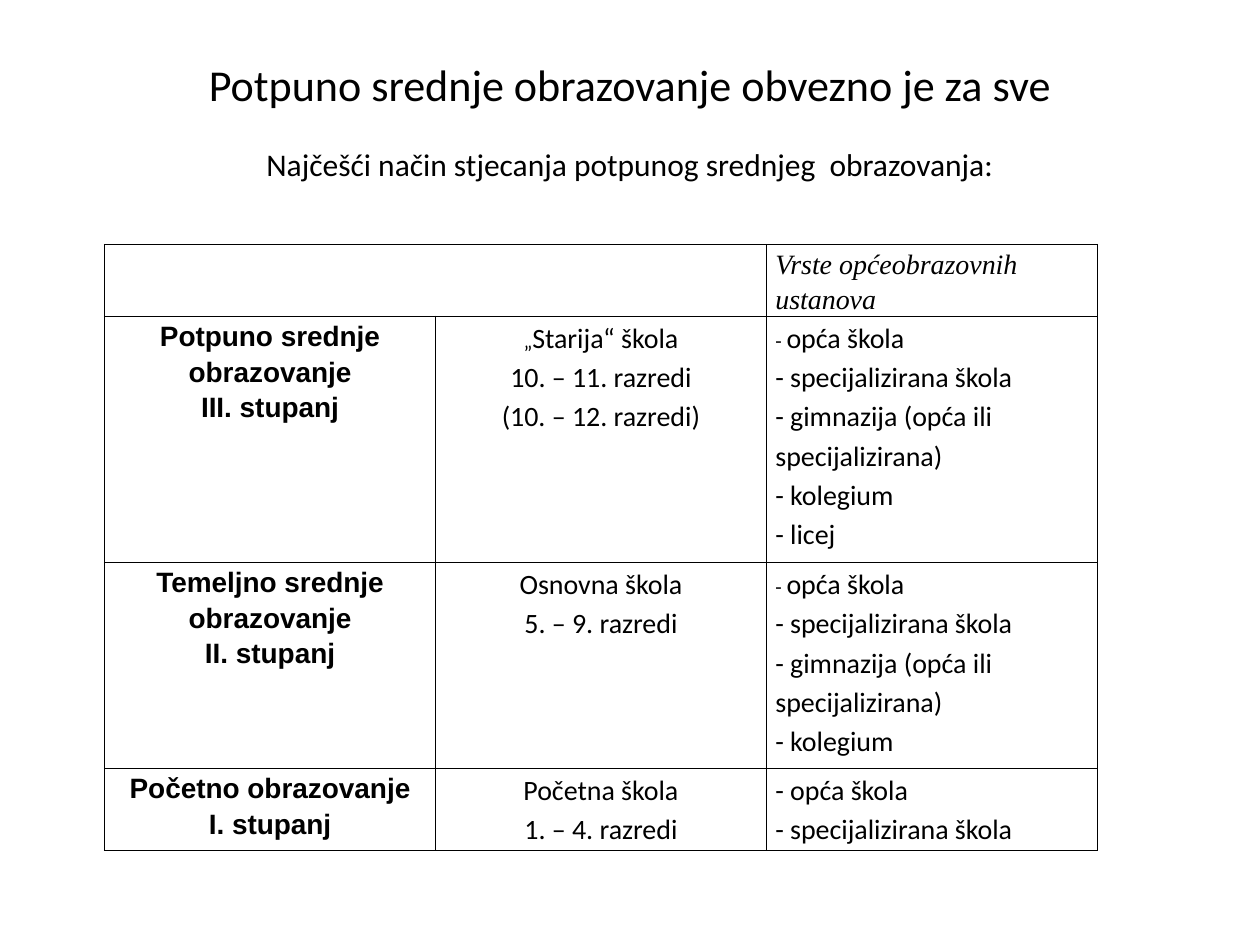
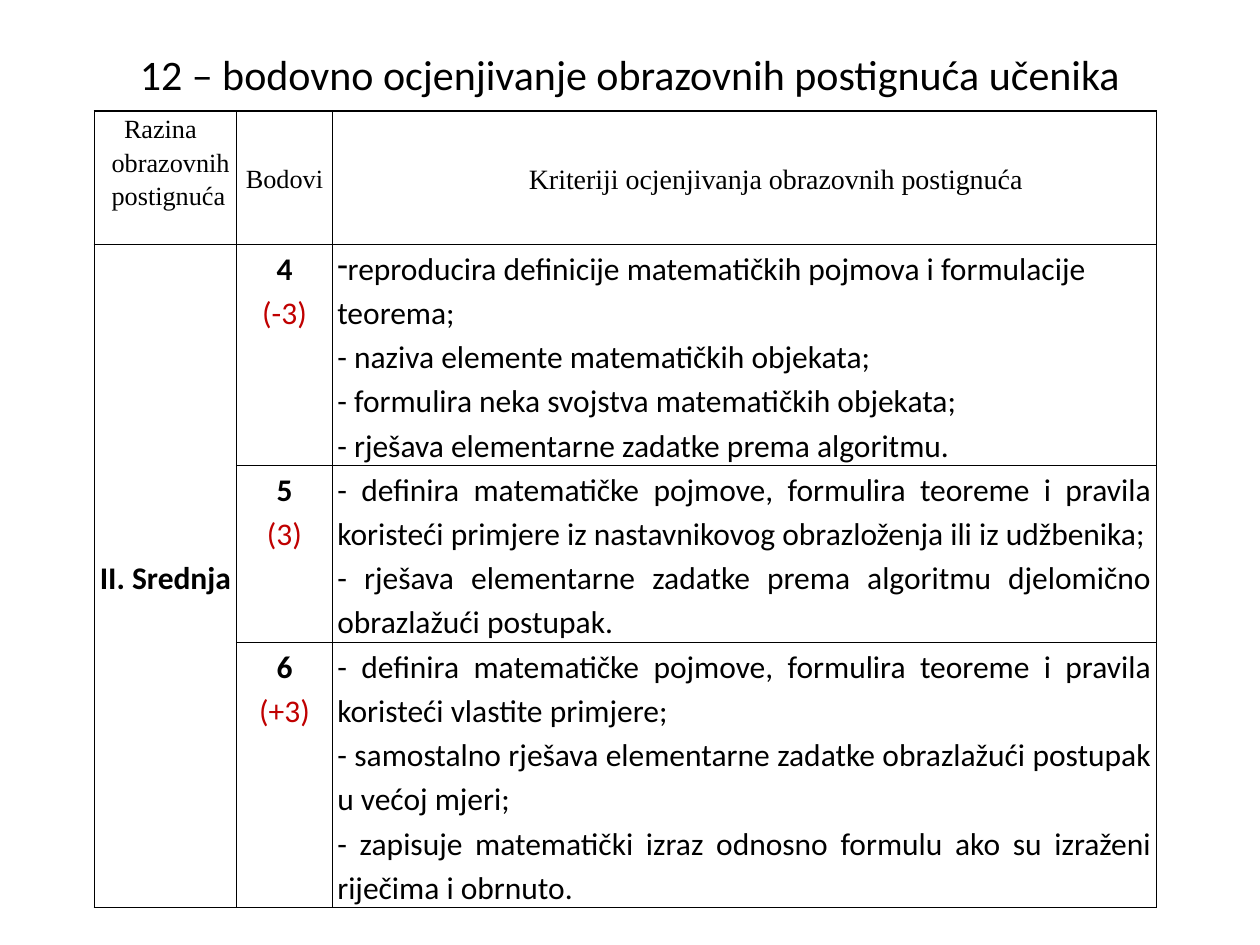
"""Build two slides on school levels and twelve-point grading."""
from dataclasses import dataclass, replace

from lxml.etree import SubElement
from pptx import Presentation
from pptx.dml.color import RGBColor
from pptx.enum.text import MSO_ANCHOR as Anchor, MSO_AUTO_SIZE as AutoSize, PP_ALIGN as Align
from pptx.oxml.ns import qn
from pptx.util import Cm, Pt

BLACK = RGBColor(0x00, 0x00, 0x00)
RED = RGBColor(0xC0, 0x00, 0x00)
TITLE_ONLY = 5
LINE_SPACING = 1.15
SMALL_MARK = Pt(12)
MARK_END = "|"


@dataclass(frozen=True)
class TextStyle:
    font: str = "Calibri"
    size: float = 16
    bold: bool = False
    italic: bool = False
    align: Align = Align.LEFT
    anchor: Anchor = Anchor.TOP
    color: RGBColor = BLACK


SCHOOL_HEAD = TextStyle(font="Times New Roman", italic=True)
LEVEL = TextStyle(font="Arial", bold=True, align=Align.CENTER)
SCHOOL = TextStyle(align=Align.CENTER)
SCHOOL_TYPES = TextStyle()

GRADE_HEAD = TextStyle(font="Times New Roman", size=15)
GRADE_HEAD_MIDDLE = replace(GRADE_HEAD, align=Align.CENTER, anchor=Anchor.MIDDLE)
CRITERIA_HEAD = replace(GRADE_HEAD_MIDDLE, size=16)
POINTS = TextStyle(size=18, bold=True, align=Align.CENTER)
OLD_GRADE = replace(POINTS, bold=False, color=RED)
GRADE_LEVEL = replace(POINTS, anchor=Anchor.MIDDLE)
CRITERIA = TextStyle(size=18, align=Align.JUSTIFY)
CRITERIA_LEFT = replace(CRITERIA, align=Align.LEFT)

SCHOOL_ROWS = [
    (["Potpuno srednje obrazovanje", "III. stupanj"],
     ["„|Starija“ škola", "10. – 11. razredi", "(10. – 12. razredi)"],
     ["- |opća škola", "- specijalizirana škola",
      "- gimnazija (opća ili specijalizirana)", "- kolegium", "- licej"]),
    (["Temeljno srednje obrazovanje", "II. stupanj"],
     ["Osnovna škola", "5. – 9. razredi"],
     ["- |opća škola", "- specijalizirana škola",
      "- gimnazija (opća ili specijalizirana)", "- kolegium"]),
    (["Početno obrazovanje", "I. stupanj"],
     ["Početna škola", "1. – 4. razredi"],
     ["- opća škola", "- specijalizirana škola"]),
]

GRADE_ROWS = [
    ("4", "(-3)", CRITERIA_LEFT,
     ["reproducira definicije matematičkih pojmova i formulacije teorema;",
      "- naziva elemente matematičkih objekata;",
      "- formulira neka svojstva matematičkih objekata;",
      "- rješava elementarne zadatke prema algoritmu."]),
    ("5", "(3)", CRITERIA,
     ["- definira matematičke pojmove, formulira teoreme i pravila koristeći primjere "
      "iz nastavnikovog obrazloženja ili iz udžbenika;",
      "- rješava elementarne zadatke prema algoritmu djelomično obrazlažući postupak."]),
    ("6", "(+3)", CRITERIA,
     ["- definira matematičke pojmove, formulira teoreme i pravila koristeći vlastite primjere;",
      "- samostalno rješava elementarne zadatke obrazlažući postupak u većoj mjeri;",
      "- zapisuje matematički izraz odnosno formulu ako su izraženi riječima i obrnuto."]),
]


def format_paragraph(para, style):
    """Apply a text style to a paragraph and its runs."""
    para.alignment = style.align
    for span in para.runs:
        span.font.name = style.font
        span.font.size = Pt(style.size)
        span.font.bold = style.bold
        span.font.italic = style.italic
        span.font.color.rgb = style.color


def add_title_slide(deck, lines, sizes, top, height, gap=0):
    """Add a slide whose title has one paragraph per line."""
    slide = deck.slides.add_slide(deck.slide_layouts[TITLE_ONLY])
    title = slide.shapes.title
    title.left, title.top, title.width, title.height = Cm(1.27), top, Cm(22.86), height
    frame = title.text_frame
    frame.text = "\n".join(lines)
    frame.auto_size = AutoSize.NONE
    frame.vertical_anchor = Anchor.MIDDLE
    for para, size in zip(frame.paragraphs, sizes):
        format_paragraph(para, TextStyle(size=size, align=Align.CENTER))
    for para in frame.paragraphs[1:]:
        para.space_before = Pt(gap)
    return slide


def add_borders(cell):
    """Draw a thin black line on each side of a cell."""
    properties = cell._tc.get_or_add_tcPr()
    for side in ("a:lnL", "a:lnR", "a:lnT", "a:lnB"):
        line = SubElement(properties, qn(side), w=str(Pt(1)))
        fill = SubElement(line, qn("a:solidFill"))
        SubElement(fill, qn("a:srgbClr"), val=str(BLACK))


def add_grid(slide, left, top, widths, heights, margin):
    """Add an unfilled table with black borders, sized in centimetres."""
    frame = slide.shapes.add_table(len(heights), len(widths), Cm(left), Cm(top),
                                   Cm(sum(widths)), Cm(sum(heights)))
    grid = frame.table
    grid.first_row = grid.horz_banding = False
    for column, width in zip(grid.columns, widths):
        column.width = Cm(width)
    for row, height in zip(grid.rows, heights):
        row.height = Cm(height)
    for cell in grid.iter_cells():
        add_borders(cell)
        cell.fill.background()
        cell.margin_left = cell.margin_right = Cm(margin)
        cell.margin_top = cell.margin_bottom = 0
    return grid


def write_cell(cell, lines, style):
    """Write one paragraph per line, with any leading mark set smaller."""
    frame = cell.text_frame
    frame.text = "\n".join(lines)
    cell.vertical_anchor = style.anchor
    for para in frame.paragraphs:
        mark, separator, rest = para.text.partition(MARK_END)
        if separator:
            para.text = mark
            para.add_run().text = rest
        format_paragraph(para, style)
        para.line_spacing = LINE_SPACING
        if separator:
            para.runs[0].font.size = SMALL_MARK


def indent(para, margin, first=0):
    """Set the left margin and first-line indent of a paragraph."""
    properties = para._p.get_or_add_pPr()
    properties.set("marL", str(Cm(margin)))
    properties.set("indent", str(Cm(first)))


def add_dash_bullet(para):
    """Give a paragraph a dash bullet."""
    SubElement(para._p.get_or_add_pPr(), qn("a:buChar"), char="-")


def add_school_slide(deck):
    """Show the levels of schooling and their kinds of school."""
    slide = add_title_slide(
        deck,
        ["Potpuno srednje obrazovanje obvezno je za sve",
         "Najčešći način stjecanja potpunog srednjeg  obrazovanja:"],
        [25.2, 18], Cm(0.91), Cm(3.02), gap=20)
    grid = add_grid(slide, 2.11, 4.93, [6.67] * 3, [1.45, 4.96, 4.15, 1.65], 0.18)
    grid.cell(0, 0).merge(grid.cell(0, 1))
    write_cell(grid.cell(0, 2), ["Vrste općeobrazovnih ustanova"], SCHOOL_HEAD)
    for row, texts in enumerate(SCHOOL_ROWS, start=1):
        for column, style in enumerate((LEVEL, SCHOOL, SCHOOL_TYPES)):
            write_cell(grid.cell(row, column), texts[column], style)


def add_grading_slide(deck):
    """Show the criteria for the middle level of the twelve-point scale."""
    slide = add_title_slide(
        deck, ["12 – bodovno ocjenjivanje obrazovnih postignuća učenika"],
        [24], Cm(0.8), Cm(1.37))
    grid = add_grid(slide, 1.9, 2.24, [2.87, 1.93, 16.61], [2.69, 4.45, 3.56, 5.33], 0.1)

    headings = [("Razina obrazovnih postignuća", GRADE_HEAD),
                ("Bodovi", GRADE_HEAD_MIDDLE),
                ("Kriteriji ocjenjivanja obrazovnih postignuća", CRITERIA_HEAD)]
    for column, (heading, style) in enumerate(headings):
        write_cell(grid.cell(0, column), [heading], style)
    indent(grid.cell(0, 0).text_frame.paragraphs[0], 0.25, 0.25)
    indent(grid.cell(0, 2).text_frame.paragraphs[0], 1.27)

    grid.cell(1, 0).merge(grid.cell(3, 0))
    write_cell(grid.cell(1, 0), ["II. Srednja"], GRADE_LEVEL)
    for row, (points, old_grade, style, criteria) in enumerate(GRADE_ROWS, start=1):
        points_cell = grid.cell(row, 1)
        write_cell(points_cell, [points, old_grade], POINTS)
        format_paragraph(points_cell.text_frame.paragraphs[1], OLD_GRADE)
        write_cell(grid.cell(row, 2), criteria, style)
    add_dash_bullet(grid.cell(1, 2).text_frame.paragraphs[0])


def main():
    """Build and save the deck."""
    deck = Presentation()
    deck.slide_width, deck.slide_height = Cm(25.4), Cm(19.05)
    add_school_slide(deck)
    add_grading_slide(deck)
    deck.save("out.pptx")


if __name__ == "__main__":
    main()
